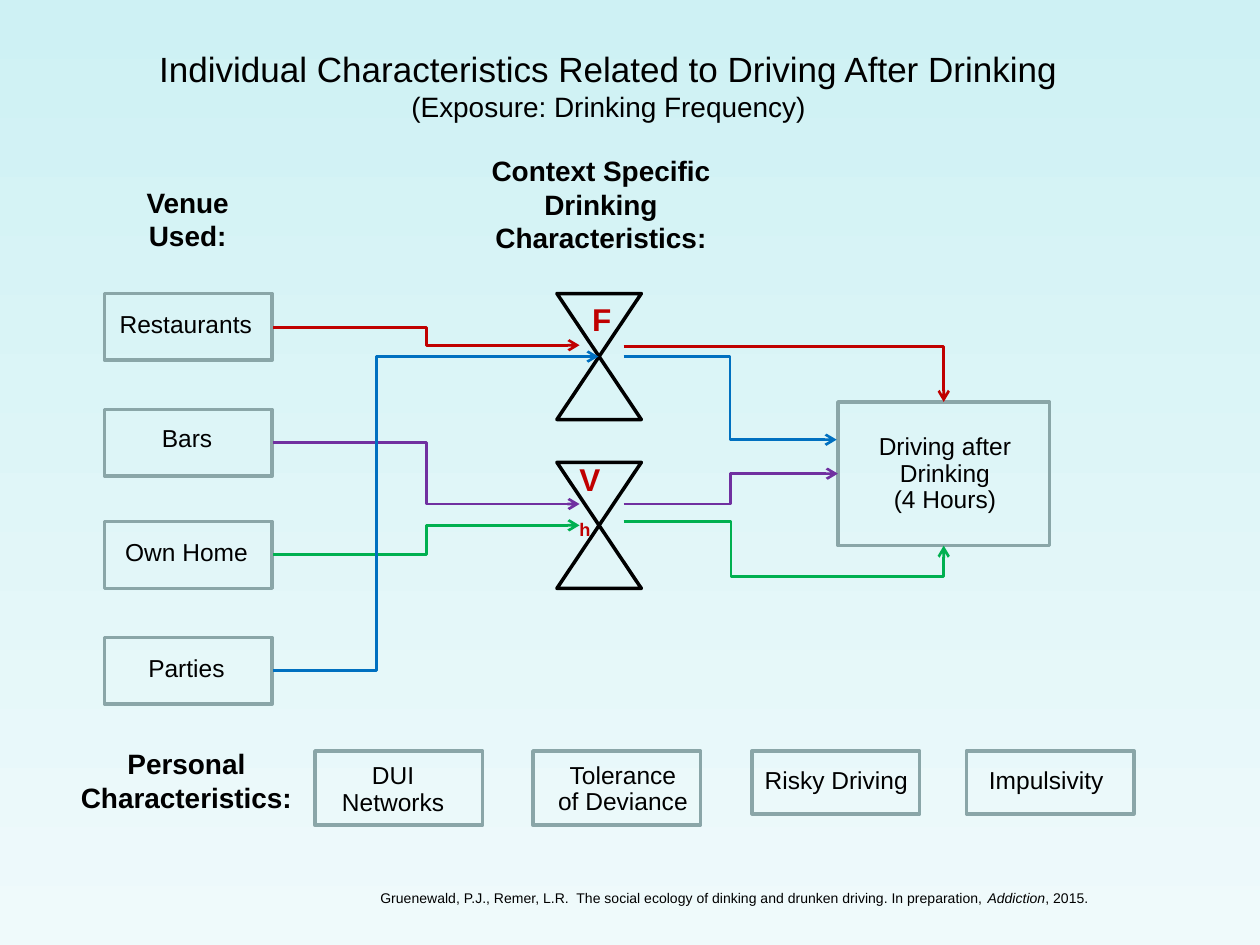
import pptx
import pptx.dml.color
import pptx.enum.dml
import pptx.enum.shapes
import pptx.enum.text
import pptx.oxml
import pptx.oxml.ns
import pptx.util
from pptx.util import Inches

COLORS = {
    "top": "CEF1F4", "bottom": "EFFAFB", "text": "000000", "frame": "8AA6A8",
    "red": "C00000", "blue": "0070C0", "purple": "7030A0", "green": "00B050",
}
FONT = "Arial"
SHAPES = pptx.enum.shapes.MSO_SHAPE
CENTER = pptx.enum.text.PP_ALIGN.CENTER
LEFT = pptx.enum.text.PP_ALIGN.LEFT


def color(name):
    return pptx.dml.color.RGBColor.from_string(COLORS[name])


def write_run(paragraph, text, size=14, bold=False, italic=False, ink="text", baseline=None):
    run = paragraph.add_run()
    run.text = text
    run.font.name = FONT
    run.font.size = pptx.util.Pt(size)
    run.font.bold = bold
    run.font.italic = italic
    run.font.color.rgb = color(ink)
    if baseline is not None:
        run.font._element.set("baseline", str(baseline * 1000))


class Diagram:
    """Holds the slide and draws each kind of element in its style."""

    def __init__(self, presentation):
        self.slide = presentation.slides.add_slide(presentation.slide_layouts[6])

    def background(self):
        fill = self.slide.background.fill
        fill.gradient()
        fill.gradient_angle = 270
        for stop, name in zip(fill.gradient_stops, ("top", "bottom")):
            stop.color.rgb = color(name)

    def outline(self, left, top, width, height, kind=SHAPES.RECTANGLE, ink="frame"):
        shape = self.slide.shapes.add_shape(
            kind, Inches(left), Inches(top), Inches(width), Inches(height))
        shape.shadow.inherit = False
        shape.fill.background()
        shape.line.color.rgb = color(ink)
        shape.line.width = pptx.util.Pt(2)

    def text(self, left, top, width, height, lines, align=CENTER, spacing=None,
             wrap=False, **style):
        """Each line is a string or a list of (text, style) runs."""
        box = self.slide.shapes.add_textbox(
            Inches(left), Inches(top), Inches(width), Inches(height))
        frame = box.text_frame
        frame.word_wrap = wrap
        frame.auto_size = pptx.enum.text.MSO_AUTO_SIZE.SHAPE_TO_FIT_TEXT
        for index, line in enumerate(lines):
            paragraph = frame.add_paragraph() if index else frame.paragraphs[0]
            paragraph.alignment = align
            if spacing:
                paragraph.line_spacing = pptx.util.Pt(spacing)
            runs = [(line, {})] if isinstance(line, str) else line
            for words, changes in runs:
                write_run(paragraph, words, **{**style, **changes})

    def arrow(self, start, end, ink, bends=3, adjustments=()):
        connector = self.slide.shapes.add_connector(
            pptx.enum.shapes.MSO_CONNECTOR.ELBOW,
            *(Inches(value) for value in (*start, *end)))
        connector.line.color.rgb = color(ink)
        connector.line.width = pptx.util.Pt(1.5)
        properties = connector._element.spPr
        geometry = properties.find(pptx.oxml.ns.qn("a:prstGeom"))
        geometry.set("prst", f"bentConnector{bends}")
        guides = "".join(
            f'<a:gd name="adj{number}" fmla="val {round(value * 100000)}"/>'
            for number, value in enumerate(adjustments, 1))
        for old in list(geometry):
            geometry.remove(old)
        namespace = pptx.oxml.ns.nsdecls("a")
        geometry.append(pptx.oxml.parse_xml(f"<a:avLst {namespace}>{guides}</a:avLst>"))
        connector.line._get_or_add_ln().append(
            pptx.oxml.parse_xml(f'<a:tailEnd {namespace} type="arrow"/>'))
        properties.append(pptx.oxml.parse_xml(f"<a:effectLst {namespace}/>"))


def main():
    presentation = pptx.Presentation()
    presentation.slide_width = Inches(10)
    presentation.slide_height = Inches(7.5)
    diagram = Diagram(presentation)
    diagram.background()

    # Title
    diagram.text(1.08, 0.33, 7.5, 0.71, [
        [("Individual Characteristics Related to Driving After Drinking", {"size": 20})],
        "(Exposure: Drinking Frequency)"], wrap=True, size=16)

    # Personal characteristics: frame left and height, label place, lines, line spacing
    for frame_left, frame_height, place, lines, spacing in (
            (7.67, 0.5, (7.75, 6.02, 1.12, 0.34), ["Impulsivity"], None),
            (5.97, 0.5, (5.97, 6.02, 1.35, 0.34), ["Risky Driving"], None),
            (4.23, 0.59, (4.31, 6.01, 1.27, 0.53), ["Tolerance", "of Deviance"], 15),
            (2.5, 0.59, (2.61, 6.01, 1.02, 0.52), ["DUI", "Networks"], 15)):
        diagram.outline(frame_left, 5.96, 1.33, frame_height)
        diagram.text(*place, lines, align=CENTER if spacing else LEFT, spacing=spacing)

    # Venues
    for frame_top, place, venue in (
            (2.33, (0.84, 2.43, 1.27, 0.32), "Restaurants"),
            (5.06, (1.07, 5.16, 0.82, 0.32), "Parties"),
            (4.14, (0.89, 4.24, 1.18, 0.31), "Own Home"),
            (3.25, (1.18, 3.33, 0.61, 0.31), "Bars")):
        diagram.outline(0.83, frame_top, 1.33, 0.53)
        diagram.text(*place, [venue], spacing=15)

    # Headings
    for place, lines in (
            ((0.53, 5.88, 1.9, 0.64), ["Personal", "Characteristics:"]),
            ((3.79, 1.17, 1.96, 0.91), ["Context Specific", "Drinking", "Characteristics:"]),
            ((1.06, 1.42, 0.86, 0.64), ["Venue", "Used:"])):
        diagram.text(*place, lines, size=16, bold=True)

    # Outcome
    diagram.outline(6.65, 3.19, 1.68, 1.14)
    diagram.text(6.75, 3.4, 1.5, 0.74, ["Driving after Drinking", "(4 Hours)"],
                 spacing=15, wrap=True)

    # Hourglasses for frequency and variance
    for top in (3.67, 2.33):
        diagram.outline(4.42, top, 0.67, 1, SHAPES.FLOWCHART_COLLATE, "text")
    letter = {"align": LEFT, "size": 18, "bold": True, "ink": "red"}
    diagram.text(4.6, 2.33, 0.32, 0.4, ["F"], **letter)
    diagram.text(4.5, 3.6, 0.44, 0.4, [[("V", {}), ("h", {"baseline": -25})]],
                 wrap=True, **letter)

    # Arrows from venues to hourglasses
    diagram.arrow((2.17, 4.4), (4.6, 4.17), "green", adjustments=[0.5])
    diagram.arrow((2.17, 2.6), (4.6, 2.74), "red", adjustments=[0.5])
    diagram.arrow((2.17, 3.51), (4.6, 4), "purple", adjustments=[0.5])
    diagram.arrow((2.17, 5.32), (4.75, 2.83), "blue", 4, [0.317, 1])

    # Arrows from hourglasses to the outcome
    diagram.arrow((4.95, 4.14), (7.49, 4.33), "green", 4, [0.335, 2.295])
    diagram.arrow((4.95, 2.75), (7.49, 3.19), "red", 2)
    diagram.arrow((4.95, 4), (6.65, 3.76), "purple", adjustments=[0.5])
    diagram.arrow((4.95, 2.83), (6.64, 3.49), "blue", adjustments=[0.5])

    # Citation
    diagram.text(2.92, 7.01, 6.92, 0.24, [[
        ("Gruenewald, P.J., Remer, L.R.  The social ecology of dinking and drunken driving. "
         "In preparation, ", {}),
        ("Addiction", {"italic": True}), (", 2015.", {})]], align=LEFT, wrap=True, size=8)

    presentation.save("out.pptx")


if __name__ == "__main__":
    main()
